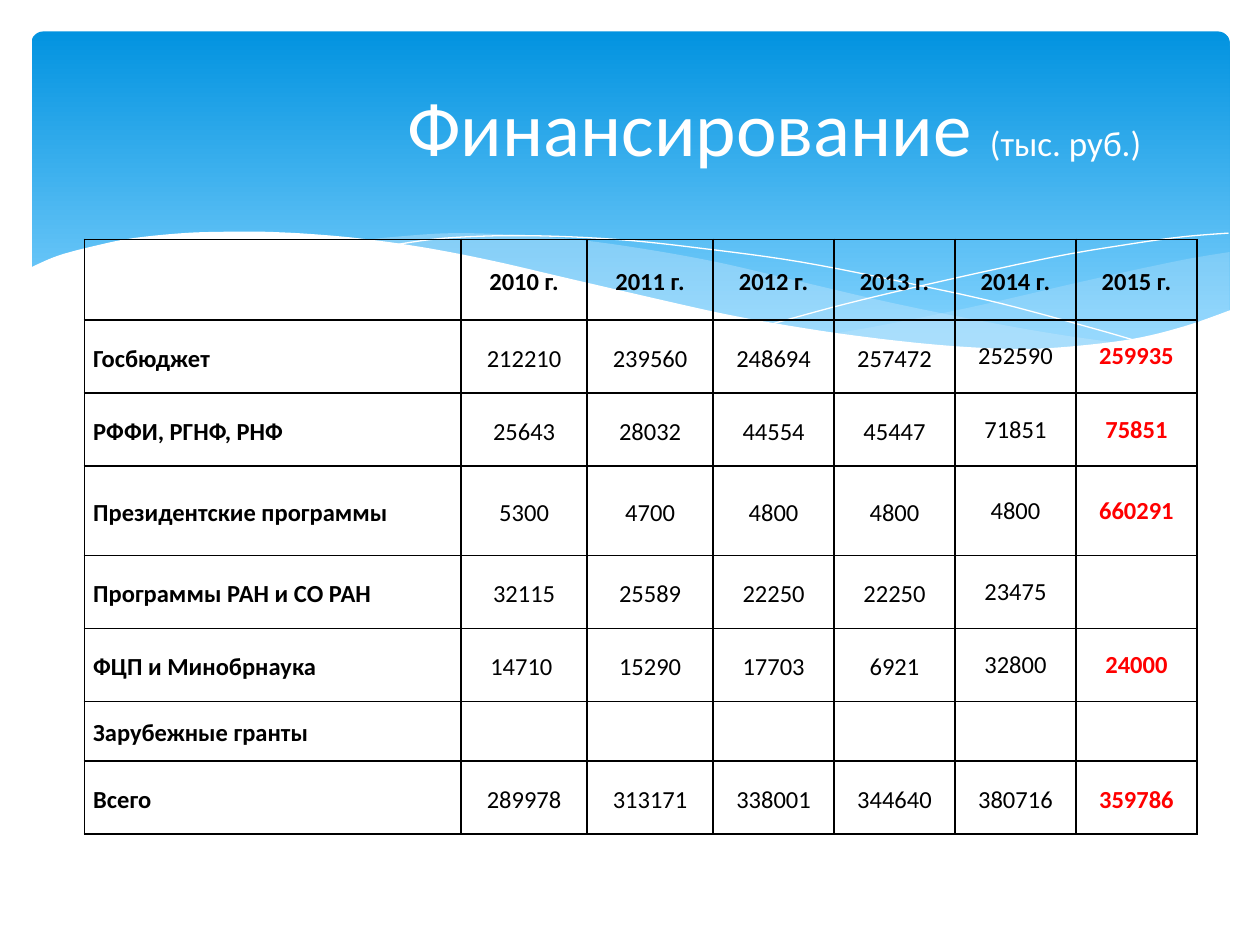
"""Build the funding slide: a wavy blue banner, a title and a table by year."""
from lxml import etree
from pptx import Presentation, util as u
from pptx.dml.color import RGBColor
from pptx.enum import shapes, text
from pptx.oxml.ns import qn

COLORS = {"top": "0293E0", "bottom": "83D3FE", "wave": "C6E7FC",
          "white": "FFFFFF", "black": "000000", "red": "FF0000"}
FONT = "Calibri"

deck = Presentation()
deck.slide_width, deck.slide_height = u.Inches(10), u.Inches(7.5)
UNIT = deck.slide_width // 10
page = deck.slides.add_slide(deck.slide_layouts[6])


def smooth(knots, steps=6):
    """Return points of a Catmull-Rom curve through the knots."""
    padded = [knots[0], *knots, knots[-1]]
    points = [knots[0]]
    for a, b, c, d in zip(padded, padded[1:], padded[2:], padded[3:]):
        for t in (step / steps for step in range(1, steps + 1)):
            points.append(tuple(
                (2 * q + (r - p) * t + (2 * p - 5 * q + 4 * r - s) * t ** 2
                 + (3 * q - p - 3 * r + s) * t ** 3) / 2
                for p, q, r, s in zip(a, b, c, d)))
    return points


def style_run(span, size, color, bold=False):
    """Set the font of one run."""
    span.font.name, span.font.size, span.font.bold = FONT, u.Pt(size), bold
    span.font.color.rgb = RGBColor.from_string(COLORS[color])


banner = page.shapes.add_shape(
    shapes.MSO_SHAPE.ROUNDED_RECTANGLE,
    *(round(n * UNIT) for n in (0.25, 0.25, 9.51, 2.7)))
banner.adjustments[0] = 0.034
banner.shadow.inherit = False
banner.line.fill.background()
banner.fill.gradient()
banner.fill.gradient_angle = 270
for stop, position, color in zip(banner.fill.gradient_stops, (0, 0.9), ("top", "bottom")):
    stop.position = position
    stop.color.rgb = RGBColor.from_string(COLORS[color])

right_wave = [
    [(9.76, 2), (9.35, 2.07), (8.61, 2.23), (7.79, 2.42), (7.06, 2.57), (6.61, 2.65)],
    [(6.61, 2.65), (7.05, 2.71), (7.57, 2.76), (8.03, 2.78), (8.54, 2.76),
     (8.97, 2.7), (9.35, 2.62), (9.76, 2.47)]]
middle_wave = [
    [(8.93, 2.73), (8.37, 2.65), (7.75, 2.54), (7.06, 2.4), (6.29, 2.22), (5.69, 2.08),
     (5.14, 1.98), (4.65, 1.91), (4.2, 1.87), (3.61, 1.85), (3.13, 1.88), (2.86, 1.91)],
    [(2.86, 1.91), (3.42, 1.99), (4.04, 2.11), (4.91, 2.32), (5.66, 2.48), (6.34, 2.61),
     (6.95, 2.7), (7.48, 2.76), (8.07, 2.78), (8.48, 2.77), (8.93, 2.73)]]
falling_line = [
    [(3.09, 1.95), (3.53, 1.89), (4.16, 1.87), (4.89, 1.9), (5.56, 1.97), (6.36, 2.08),
     (7.27, 2.26), (7.95, 2.41), (8.69, 2.61), (9.07, 2.72)]]
rising_line = [
    [(6.13, 2.57), (6.72, 2.41), (7.48, 2.23), (8.36, 2.04), (8.95, 1.94),
     (9.38, 1.88), (9.75, 1.85)]]
page_wave = [
    [(9.77, 2.46), (9.4, 2.59), (8.99, 2.69), (8.5, 2.75), (8.09, 2.77), (7.61, 2.75),
     (7.08, 2.7), (6.48, 2.62), (5.79, 2.5), (5.03, 2.33), (4.47, 2.2), (3.91, 2.07),
     (3.4, 1.97), (2.92, 1.9), (2.5, 1.86), (2.11, 1.84), (1.77, 1.84), (1.46, 1.85),
     (1.06, 1.89), (0.76, 1.95), (0.46, 2.03), (0.23, 2.13)],
    [(0.23, 3.29)], [(9.77, 3.29)]]

for curves, color, alpha in ((right_wave, "wave", 29), (middle_wave, "wave", 40),
                             (falling_line, None, None), (rising_line, None, None),
                             (page_wave, "white", 100)):
    outline = [(round(x * UNIT), round(y * UNIT))
               for knots in curves for x, y in smooth(knots)]
    builder = page.shapes.build_freeform(*outline[0])
    builder.add_line_segments(outline[1:], close=color is not None)
    wave = builder.convert_to_shape()
    wave.shadow.inherit = False
    if color is None:
        wave.fill.background()
        wave.line.color.rgb = RGBColor.from_string(COLORS["white"])
        wave.line.width = u.Pt(0)
        continue
    wave.line.fill.background()
    wave.fill.solid()
    wave.fill.fore_color.rgb = RGBColor.from_string(COLORS[color])
    if alpha < 100:
        tint = next(wave.element.iter(qn("a:srgbClr")))
        etree.SubElement(tint, qn("a:alpha"), val=str(alpha * 1000))

title = page.shapes.add_textbox(*(round(n * UNIT) for n in (2.64, 0.33, 7.01, 1.33)))
title.text_frame.word_wrap = True
title.text_frame.vertical_anchor = text.MSO_ANCHOR.MIDDLE
para = title.text_frame.paragraphs[0]
para.alignment = text.PP_ALIGN.CENTER
for words, size in (("Финансирование ", 44), ("(тыс. руб.)", 20)):
    span = para.add_run()
    span.text = words
    style_run(span, size, "white")

funding = [
    ["", *(f"{year} г." for year in range(2010, 2016))],
    ["Госбюджет", "212210", "239560", "248694", "257472", "252590", "259935"],
    ["РФФИ, РГНФ, РНФ", "25643", "28032", "44554", "45447", "71851", "75851"],
    ["Президентские программы", "5300", "4700", "4800", "4800", "4800", "660291"],
    ["Программы РАН и СО РАН", "32115", "25589", "22250", "22250", "23475", ""],
    ["ФЦП и Минобрнаука", "14710 ", "15290", "17703", "6921", "32800", "24000"],
    ["Зарубежные гранты", "", "", "", "", "", ""],
    ["Всего", "289978", "313171", "338001", "344640", "380716", "359786"]]
widths = [2.99, 1, 1] + [0.96] * 4
heights = [0.64, 0.58, 0.58, 0.71, 0.58, 0.58, 0.47, 0.58]
total_row, latest_column = len(heights) - 1, len(widths) - 1

table = page.shapes.add_table(
    len(heights), len(widths),
    *(round(n * UNIT) for n in (0.67, 1.9, sum(widths), sum(heights)))).table
table.first_row = table.horz_banding = False
for column, width in zip(table.columns, widths):
    column.width = round(width * UNIT)
for row, height in zip(table.rows, heights):
    row.height = round(height * UNIT)

for r, values in enumerate(funding):
    for c, value in enumerate(values):
        cell = table.cell(r, c)
        cell.vertical_anchor = text.MSO_ANCHOR.MIDDLE
        cell.margin_left = cell.margin_right = round(0.07 * UNIT)
        cell.margin_top = cell.margin_bottom = 0
        properties = cell._tc.get_or_add_tcPr()
        for side in ("lnL", "lnR", "lnT", "lnB"):
            border = etree.SubElement(properties, qn(f"a:{side}"), w=str(u.Pt(1)))
            paint = etree.SubElement(border, qn("a:solidFill"))
            etree.SubElement(paint, qn("a:srgbClr"), val=COLORS["black"])
        cell.fill.background()
        if not value:
            continue
        para = cell.text_frame.paragraphs[0]
        para.text = value
        para.alignment = text.PP_ALIGN.CENTER if c else text.PP_ALIGN.LEFT
        if c < latest_column - 1 or r in (0, total_row):
            para.line_spacing = 1.15
        latest = r > 0 and c == latest_column
        style_run(para.runs[0], 14, "red" if latest else "black",
                  bold=r == 0 or c == 0 or latest)

deck.save("out.pptx")
